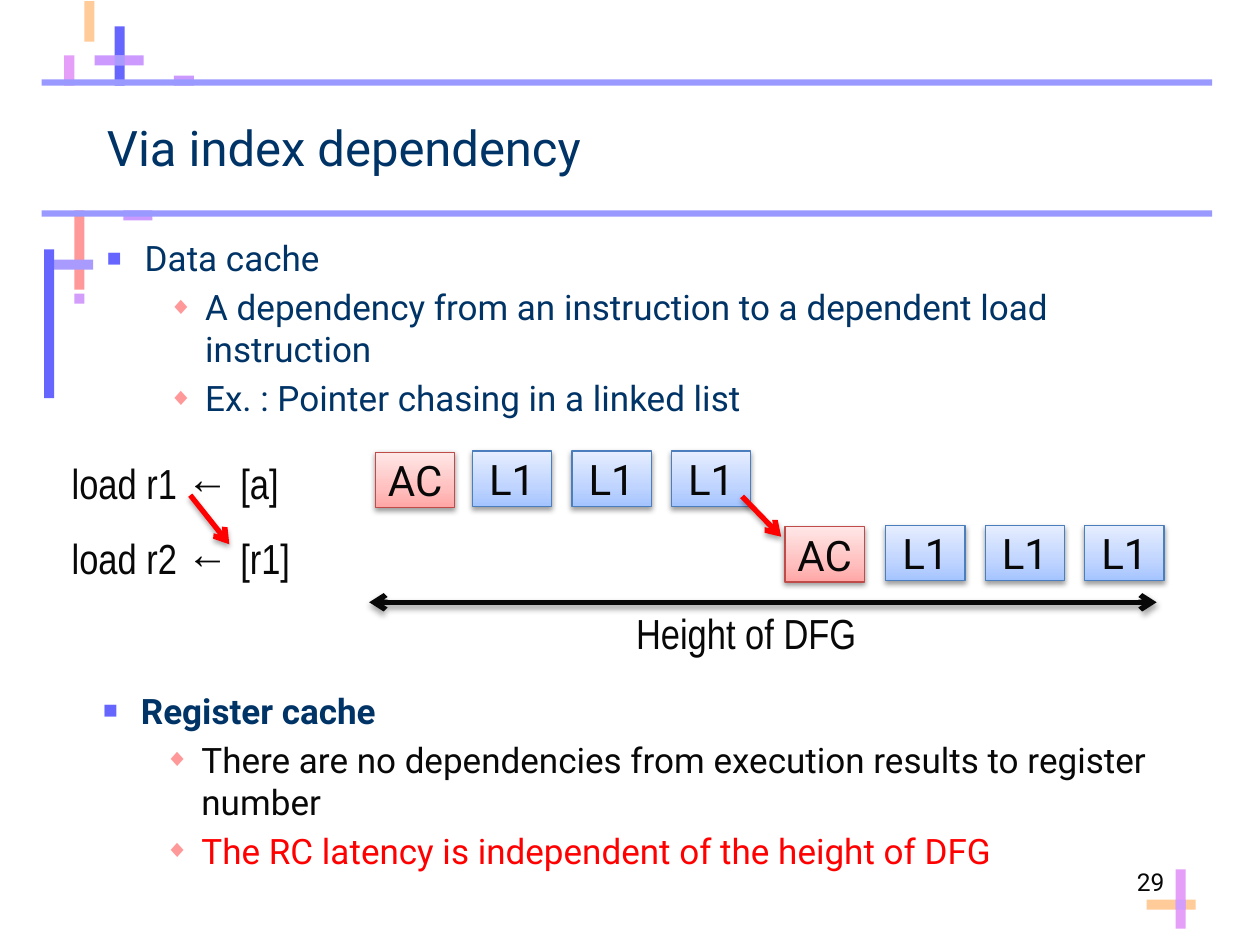
from dataclasses import dataclass

from lxml.etree import SubElement
from pptx import Presentation
from pptx.dml.color import RGBColor
from pptx.enum.shapes import MSO_CONNECTOR, MSO_SHAPE
from pptx.enum.text import MSO_ANCHOR, PP_ALIGN
from pptx.oxml import parse_xml
from pptx.oxml.ns import nsdecls, qn
from pptx.util import Inches, Pt


@dataclass(frozen=True)
class Theme:
    font: str = "Roboto"
    narrow_font: str = "Arial Narrow"
    navy: str = "003366"
    black: str = "080808"
    red: str = "FF0000"
    violet: str = "6666FF"
    rule: str = "9999FF"
    purple: str = "CC99FF"
    lavender: str = "A99BFD"
    orchid: str = "D39DFB"
    pink: str = "E69FF9"
    peach: str = "FFCC99"
    salmon: str = "FF9999"
    load_gradient: tuple = ("A4C4FF", "BFD4FF", "E6EEFF")
    load_line: str = "4B7EBC"
    address_gradient: tuple = ("FFA6A5", "FFC0BF", "FFE7E7")
    address_line: str = "BF4C48"
    title_size: int = 28
    body_size: int = 20
    diagram_size: int = 24
    number_size: int = 14


theme = Theme()


def write_text(shape, text, size, font=theme.font, color=theme.black, bold=False,
               align=PP_ALIGN.LEFT, anchor=MSO_ANCHOR.TOP, wrap=True, first=True):
    """Fill the first paragraph of a shape, or append one, and return it."""
    frame = shape.text_frame
    frame.word_wrap = wrap
    frame.vertical_anchor = anchor
    paragraph = frame.paragraphs[0] if first else frame.add_paragraph()
    paragraph.alignment = align
    run = paragraph.add_run()
    run.text = text
    run.font.size = Pt(size)
    run.font.name = font
    run.font.bold = bold
    run.font.color.rgb = RGBColor.from_string(color)
    return paragraph


def add_shadow(shape, opacity, distance):
    properties = shape._element.spPr
    properties.append(parse_xml(
        f'<a:effectLst {nsdecls("a")}><a:outerShdw blurRad="{Pt(3.1)}" dist="{Pt(distance)}" '
        f'dir="5400000" rotWithShape="0"><a:srgbClr val="000000">'
        f'<a:alpha val="{opacity * 1000}"/></a:srgbClr></a:outerShdw></a:effectLst>'))


presentation = Presentation()
presentation.slide_width = Inches(10)
presentation.slide_height = Inches(7.5)
slide = presentation.slides.add_slide(presentation.slide_layouts[6])
shapes = slide.shapes

# Decorative bars and the two rules around the title
decorations = [
    (0.91, 0.21, 0.08, 0.47, theme.violet),
    (1.38, 0.6, 0.16, 0.08, theme.purple),
    (0.75, 0.44, 0.39, 0.08, theme.purple),
    (0.91, 0.44, 0.08, 0.08, theme.lavender),
    (0.67, 0.01, 0.08, 0.32, theme.peach),
    (0.51, 0.44, 0.08, 0.24, theme.pink),
    (0.98, 1.67, 0.23, 0.08, theme.purple),
    (0.59, 1.67, 0.08, 0.63, theme.salmon),
    (0.43, 2.06, 0.31, 0.08, theme.lavender),
    (0.59, 2.33, 0.08, 0.08, theme.orchid),
    (0.35, 1.98, 0.08, 1.18, theme.violet),
    (9.1, 7.14, 0.39, 0.08, theme.peach),
    (9.33, 6.9, 0.08, 0.47, theme.pink),
    (9.33, 7.14, 0.08, 0.08, theme.orchid),
    (0.33, 1.67, 9.29, 0.05, theme.rule),
    (0.33, 0.63, 9.29, 0.05, theme.rule),
]
for *bounds, color in decorations:
    bar = shapes.add_shape(MSO_SHAPE.RECTANGLE, *map(Inches, bounds))
    bar.shadow.inherit = False
    bar.fill.solid()
    bar.fill.fore_color.rgb = RGBColor.from_string(color)
    bar.line.fill.background()

title = shapes.add_textbox(Inches(0.75), Inches(0.67), Inches(8.5), Inches(1))
write_text(title, "Via index dependency", theme.title_size, color=theme.navy,
           anchor=MSO_ANCHOR.MIDDLE)

# Bulleted sections: heading, then second-level points
bullet_levels = [(0.3, -0.3, "■", theme.violet), (0.78, -0.29, "◆", theme.salmon)]
sections = [
    (0.75, 1.83, 1.08, [
        (0, "Data cache", theme.navy, False),
        (1, "A dependency from an instruction to a dependent load instruction",
         theme.navy, False),
        (1, "Ex. : Pointer chasing in a linked list", theme.navy, False),
    ]),
    (0.72, 5.42, 0.54, [
        (0, "Register cache", theme.navy, True),
        (1, "There are no dependencies from execution results to register number",
         theme.black, False),
        (1, "The RC latency is independent of the height of DFG", theme.red, False),
    ]),
]
for left, top, height, points in sections:
    body = shapes.add_textbox(Inches(left), Inches(top), Inches(8.58), Inches(height))
    for index, (level, text, color, bold) in enumerate(points):
        paragraph = write_text(body, text, theme.body_size, color=color, bold=bold,
                               first=index == 0)
        paragraph.level = level
        paragraph.space_before = Pt(theme.body_size * 0.2)
        margin, indent, character, bullet_color = bullet_levels[level]
        properties = paragraph._p.get_or_add_pPr()
        properties.set("marL", str(Inches(margin)))
        properties.set("indent", str(Inches(indent)))
        SubElement(SubElement(properties, qn("a:buClr")), qn("a:srgbClr"), val=bullet_color)
        SubElement(properties, qn("a:buSzPct"), val="70000")
        SubElement(properties, qn("a:buFont"), typeface="Arial")
        SubElement(properties, qn("a:buChar"), char=character)

slide_number = shapes.add_textbox(Inches(7.92), Inches(6.83), Inches(1.42), Inches(0.44))
write_text(slide_number, "29", theme.number_size, align=PP_ALIGN.RIGHT)

# Instructions and the caption of the height arrow
for text, left, top in [("load r1 ← [a]", 0.47, 3.58), ("load r2 ← [r1]", 0.47, 4.18),
                        ("Height of DFG", 4.95, 4.77)]:
    label = shapes.add_textbox(Inches(left), Inches(top), Inches(2.12), Inches(0.5))
    write_text(label, text, theme.diagram_size, font=theme.narrow_font)

# Pipeline rows: one address calculation, then three cache stages
stage_pitch = 0.79
for address_left, load_left, top in [(2.98, 3.75, 3.58), (6.23, 7.03, 4.17)]:
    stages = [("AC", address_left, top + 0.01, theme.address_gradient, theme.address_line)]
    stages += [("L1", load_left + stage_pitch * index, top, theme.load_gradient,
                theme.load_line) for index in range(3)]
    for text, left, stage_top, gradient, line_color in stages:
        stage = shapes.add_shape(MSO_SHAPE.RECTANGLE, Inches(left), Inches(stage_top),
                                 Inches(0.63), Inches(0.44))
        stage.fill.gradient()
        stage.fill.gradient_angle = 90
        stops = stage._element.spPr.find(qn("a:gradFill")).find(qn("a:gsLst"))
        for stop in list(stops):
            stops.remove(stop)
        for position, color in zip((0, 35, 100), gradient):
            stop = SubElement(stops, qn("a:gs"), pos=str(position * 1000))
            SubElement(stop, qn("a:srgbClr"), val=color)
        stage.line.color.rgb = RGBColor.from_string(line_color)
        stage.line.width = Pt(0.75)
        add_shadow(stage, opacity=38, distance=1.6)
        write_text(stage, text, theme.diagram_size, align=PP_ALIGN.CENTER,
                   anchor=MSO_ANCHOR.MIDDLE, wrap=False)

# Dependency arrows and the double-headed height arrow
arrows = [
    (1.51, 3.93, 1.82, 4.32, theme.red, ["tailEnd"]),
    (2.93, 4.78, 9.18, 4.78, theme.black, ["headEnd", "tailEnd"]),
    (5.89, 3.94, 6.2, 4.26, theme.red, ["tailEnd"]),
]
for *ends, color, arrowheads in arrows:
    arrow = shapes.add_connector(MSO_CONNECTOR.STRAIGHT, *map(Inches, ends))
    arrow.line.color.rgb = RGBColor.from_string(color)
    arrow.line.width = Pt(3)
    for arrowhead in arrowheads:
        SubElement(arrow.line._get_or_add_ln(), qn(f"a:{arrowhead}"), type="arrow")
    add_shadow(arrow, opacity=35, distance=1.8)

presentation.save("out.pptx")
